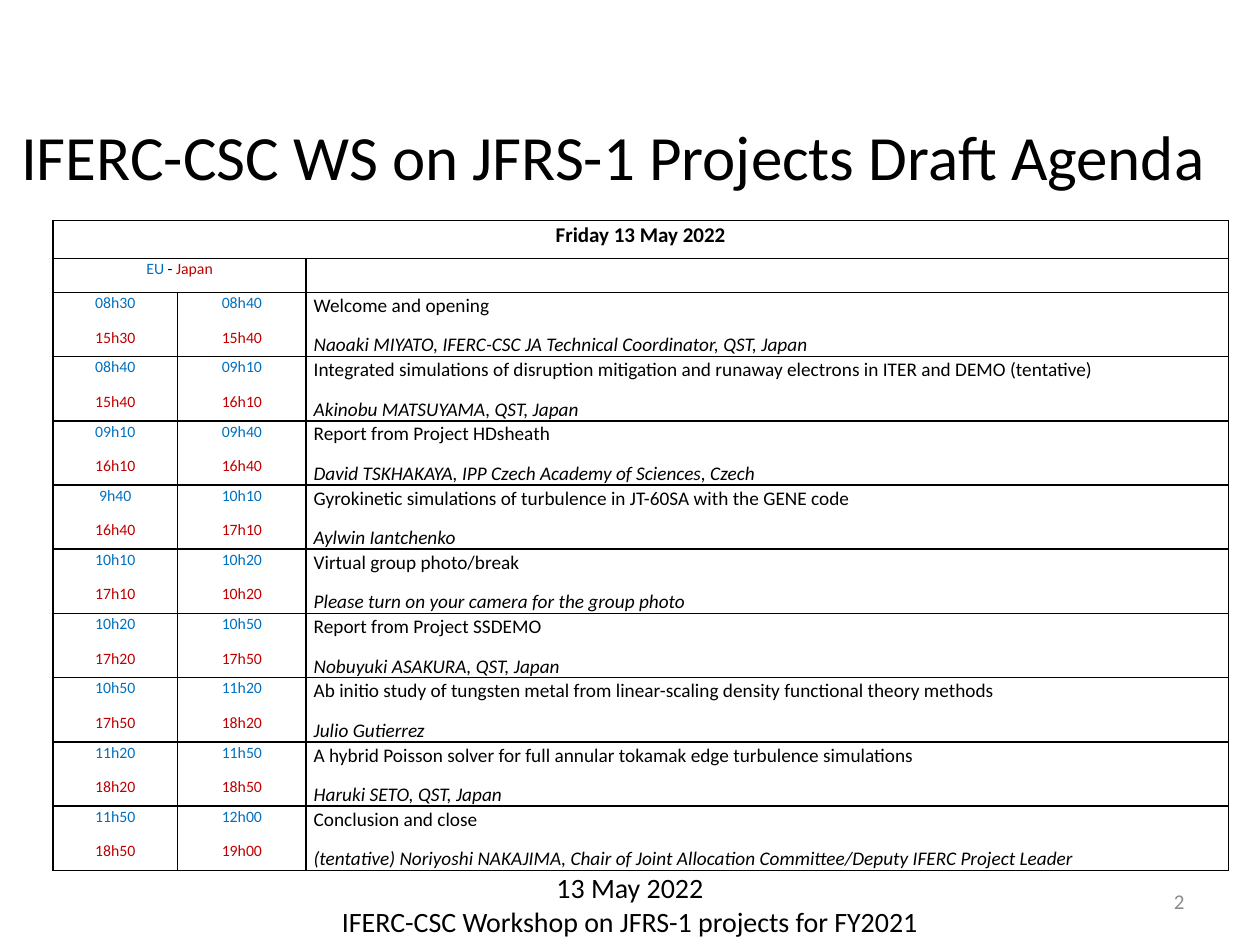
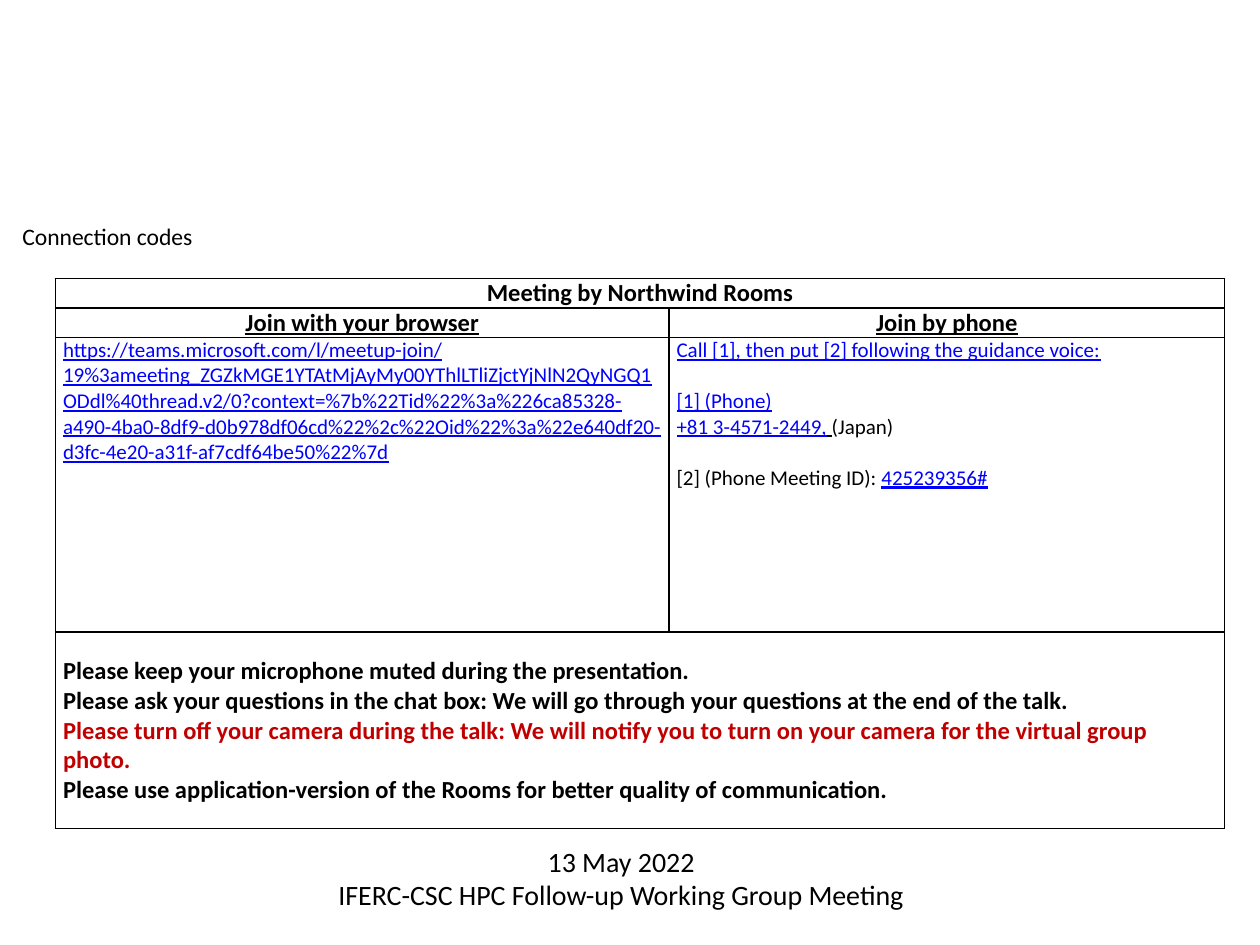
from lxml.etree import SubElement
from pptx import Presentation
from pptx.dml.color import RGBColor
from pptx.enum.text import MSO_ANCHOR, PP_ALIGN
from pptx.oxml.ns import qn
from pptx.util import Inches, Pt

# Shared look
FONT = "Calibri"
HEX = {"black": "000000", "white": "FFFFFF", "blue": "0070C0",
       "red": "C00000", "link": "0000FF", "gray": "8C8C8C"}
LEFT, MID, RIGHT = PP_ALIGN.LEFT, PP_ALIGN.CENTER, PP_ALIGN.RIGHT
FOOT_SIZE = (5.36, 0.64)
DATE = "13 May 2022"

# Agenda: start (EU, Japan), end (EU, Japan), topic, speaker
TITLE = "IFERC-CSC WS on JFRS-1 Projects Draft Agenda"
DAY = "Friday 13 May 2022"
ZONES = [("EU", 9, "blue"), (" - ", 9), ("Japan", 9, "red")]
TALKS = [
    (("08h30", "15h30"), ("08h40", "15h40"), "Welcome and opening",
     "Naoaki MIYATO, IFERC-CSC JA Technical Coordinator, QST, Japan"),
    (("08h40", "15h40"), ("09h10", "16h10"),
     "Integrated simulations of disruption mitigation and runaway electrons in ITER and DEMO (tentative)",
     "Akinobu MATSUYAMA, QST, Japan"),
    (("09h10", "16h10"), ("09h40", "16h40"), "Report from Project HDsheath",
     "David TSKHAKAYA, IPP Czech Academy of Sciences, Czech"),
    (("9h40", "16h40"), ("10h10", "17h10"),
     "Gyrokinetic simulations of turbulence in JT-60SA with the GENE code",
     "Aylwin Iantchenko"),
    (("10h10", "17h10"), ("10h20", "10h20"), "Virtual group photo/break",
     "Please turn on your camera for the group photo"),
    (("10h20", "17h20"), ("10h50", "17h50"), "Report from Project SSDEMO",
     "Nobuyuki ASAKURA, QST, Japan"),
    (("10h50", "17h50"), ("11h20", "18h20"),
     "Ab initio study of tungsten metal from linear-scaling density functional theory methods",
     "Julio Gutierrez"),
    (("11h20", "18h20"), ("11h50", "18h50"),
     "A hybrid Poisson solver for full annular tokamak edge turbulence simulations",
     "Haruki SETO, QST, Japan"),
    (("11h50", "18h50"), ("12h00", "19h00"), "Conclusion and close",
     "(tentative) Noriyoshi NAKAJIMA, Chair of Joint Allocation Committee/Deputy IFERC Project Leader"),
]
AGENDA_FOOT = "IFERC-CSC Workshop on JFRS-1 projects for FY2021"

# Connection: each paragraph is a list of runs (text, size, colour, flags)
CODES = "Connection codes"
MEETING = "Meeting by Northwind Rooms"
WAYS = ["Join with your browser", "Join by phone"]
URL = ("https://teams.microsoft.com/l/meetup-join/"
       "19%3ameeting_ZGZkMGE1YTAtMjAyMy00YThlLTliZjctYjNlN2QyNGQ1ODdl%40thread.v2/"
       "0?context=%7b%22Tid%22%3a%226ca85328-a490-4ba0-8df9-d0b978df06cd%22%2c"
       "%22Oid%22%3a%22e640df20-d3fc-4e20-a31f-af7cdf64be50%22%7d")
PHONE = [
    [("Call [1], then put [2] following the guidance voice:", 12, "link", "u")],
    [("[1] (Phone)", 12, "link", "u")],
    [("+81 3-4571-2449,", 12, "link", "u"), (" ", 12, "black", "u"), ("(Japan)", 12)],
    [("[2] (Phone Meeting ID): ", 12), ("425239356#", 12, "link", "u")],
]
GAPS = {1: 14.6, 3: 14.6}  # points before a phone paragraph
RULES = [
    ("Please keep your microphone muted during the presentation.", "black"),
    ("Please ask your questions in the chat box: We will go through your questions "
     "at the end of the talk.", "black"),
    ("Please turn off your camera during the talk: We will notify you to turn on "
     "your camera for the virtual group photo.", "red"),
    ("Please use application-version of the Rooms for better quality of communication.",
     "black"),
]
CODES_FOOT = "IFERC-CSC HPC Follow-up Working Group Meeting"


def add_run(para, text, size, color="black", flags=""):
    run = para.add_run()
    run.text = text
    font = run.font
    font.name, font.size = FONT, Pt(size)
    font.color.rgb = RGBColor.from_string(HEX[color])
    font.bold, font.italic, font.underline = (flag in flags for flag in "biu")


def write(frame, paras, align=LEFT, line=None, after=None, gaps={}):
    for num, runs in enumerate(paras):
        para = frame.add_paragraph() if num else frame.paragraphs[0]
        para.alignment = align
        if line:
            para.line_spacing = line
        if after:
            para.space_after = Pt(after)
        if num in gaps:
            para.space_before = Pt(gaps[num])
        for run in runs:
            add_run(para, *run)


def add_text(slide, place, paras, align=LEFT, anchor=MSO_ANCHOR.TOP):
    frame = slide.shapes.add_textbox(*map(Inches, place)).text_frame
    frame.word_wrap = True
    frame.vertical_anchor = anchor
    write(frame, paras, align)


def add_foot(slide, left, top, event):
    add_text(slide, (left, top, *FOOT_SIZE), [[(DATE, 16)], [(event, 16)]], MID)


def style_cell(cell):
    cell.margin_left = cell.margin_right = Inches(0.06)
    cell.margin_top = cell.margin_bottom = 0
    props = cell._tc.get_or_add_tcPr()
    for side in ("lnL", "lnR", "lnT", "lnB"):
        edge = SubElement(props, qn(f"a:{side}"), w=str(Pt(1)))
        paint = SubElement(edge, qn("a:solidFill"))
        SubElement(paint, qn("a:srgbClr"), val=HEX["black"])
    cell.fill.solid()
    cell.fill.fore_color.rgb = RGBColor.from_string(HEX["white"])


def add_grid(slide, left, top, cols, rows):
    table = slide.shapes.add_table(
        len(rows), len(cols), Inches(left), Inches(top),
        Inches(sum(cols)), Inches(sum(rows))).table
    table.first_row = table.horz_banding = False
    for col, width in zip(table.columns, cols):
        col.width = Inches(width)
    for row, height in zip(table.rows, rows):
        row.height = Inches(height)
        for cell in row.cells:
            style_cell(cell)
    return table


def shrink_blanks(table, size):
    """Keep empty cells from making their rows taller."""
    for cell in table.iter_cells():
        if not cell.text_frame.text:
            para = cell.text_frame.paragraphs[0]._p
            SubElement(para, qn("a:endParaRPr"), sz=str(size * 100))


def build_agenda(slide):
    add_text(slide, (0.07, 0.81, 9.86, 0.84), [[(TITLE, 36)]], anchor=MSO_ANCHOR.MIDDLE)
    table = add_grid(slide, 0.42, 1.75, [0.99, 1.02, 7.32],
                     [0.3, 0.27] + [0.51] * len(TALKS))
    table.cell(0, 0).merge(table.cell(0, 2))
    table.cell(1, 0).merge(table.cell(1, 1))

    def put(row, col, paras, align=MID):
        write(table.cell(row, col).text_frame, paras, align, 1.07, 8)

    put(0, 0, [[(DAY, 12, "black", "b")]])
    put(1, 0, [ZONES])
    for row, (start, end, topic, who) in enumerate(TALKS, 2):
        for col, (west, east) in enumerate((start, end)):
            put(row, col, [[(west, 9, "blue")], [(east, 9, "red")]])
        put(row, 2, [[(topic, 11)], [(who, 11, "black", "i")]], LEFT)
    shrink_blanks(table, 9)
    add_text(slide, (7.17, 6.95, 2.33, 0.4), [[("2", 12, "gray")]], RIGHT, MSO_ANCHOR.MIDDLE)
    add_foot(slide, 2.32, 6.86, AGENDA_FOOT)


def build_codes(slide):
    table = add_grid(slide, 0.44, 2.21, [4.87, 4.41], [0.23, 0.23, 2.34, 1.56])
    for row in (0, 3):
        table.cell(row, 0).merge(table.cell(row, 1))
    write(table.cell(0, 0).text_frame, [[(MEETING, 14, "black", "b")]], MID)
    for col, way in enumerate(WAYS):
        write(table.cell(1, col).text_frame, [[(way, 14, "black", "bu")]], MID)
    write(table.cell(2, 0).text_frame, [[(URL, 12, "link", "u")]])
    write(table.cell(2, 1).text_frame, PHONE, gaps=GAPS)
    rules = table.cell(3, 0)
    rules.margin_top = Inches(0.19)
    write(rules.text_frame, [[(text, 14, color, "b")] for text, color in RULES])
    shrink_blanks(table, 9)
    add_text(slide, (0.08, 1.71, 6.62, 0.33), [[(CODES, 13.5)]])
    add_foot(slide, 2.25, 6.65, CODES_FOOT)


def main():
    deck = Presentation()
    deck.slide_width, deck.slide_height = Inches(10), Inches(7.5)
    for build in (build_agenda, build_codes):
        build(deck.slides.add_slide(deck.slide_layouts[6]))
    deck.save("out.pptx")


if __name__ == "__main__":
    main()
